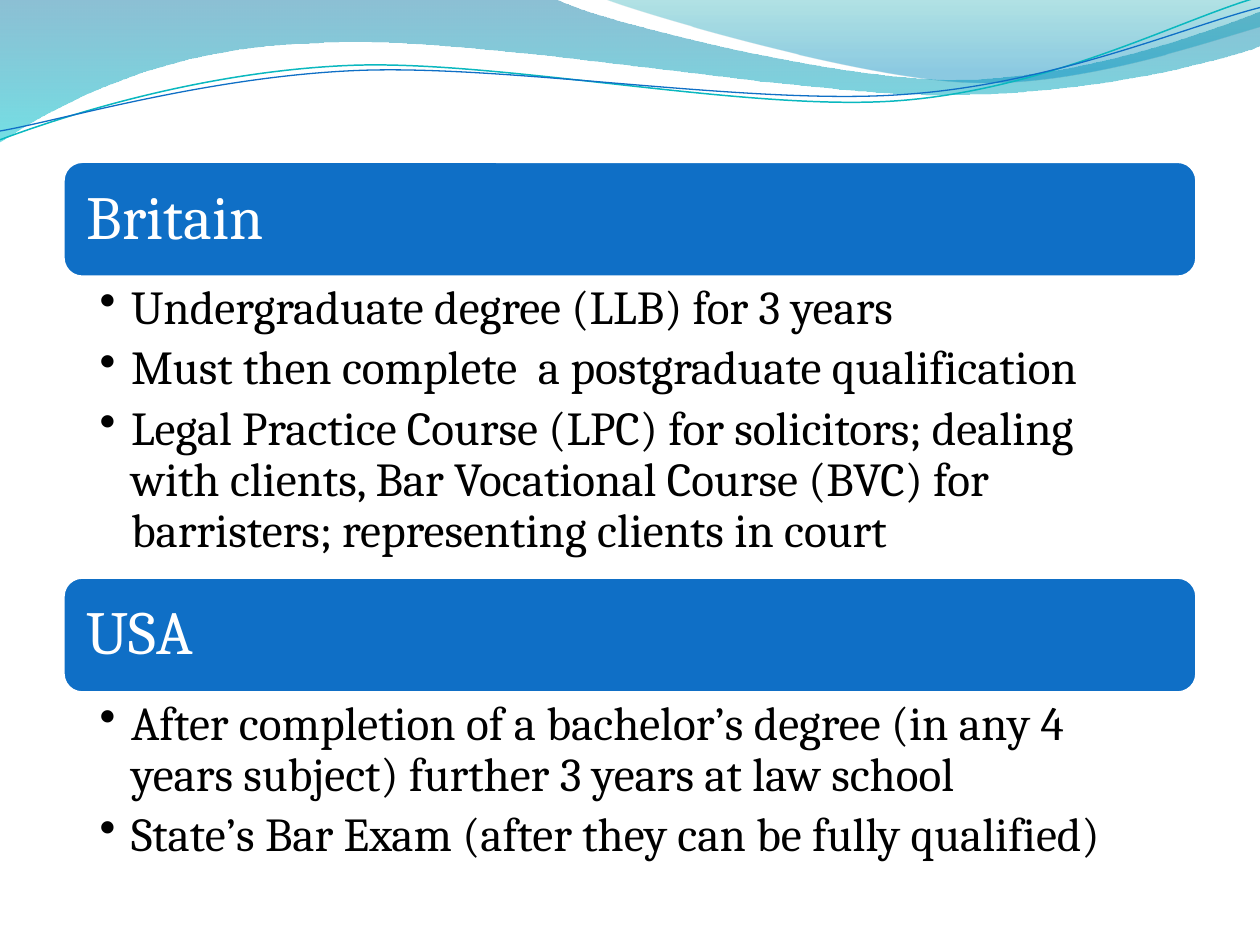
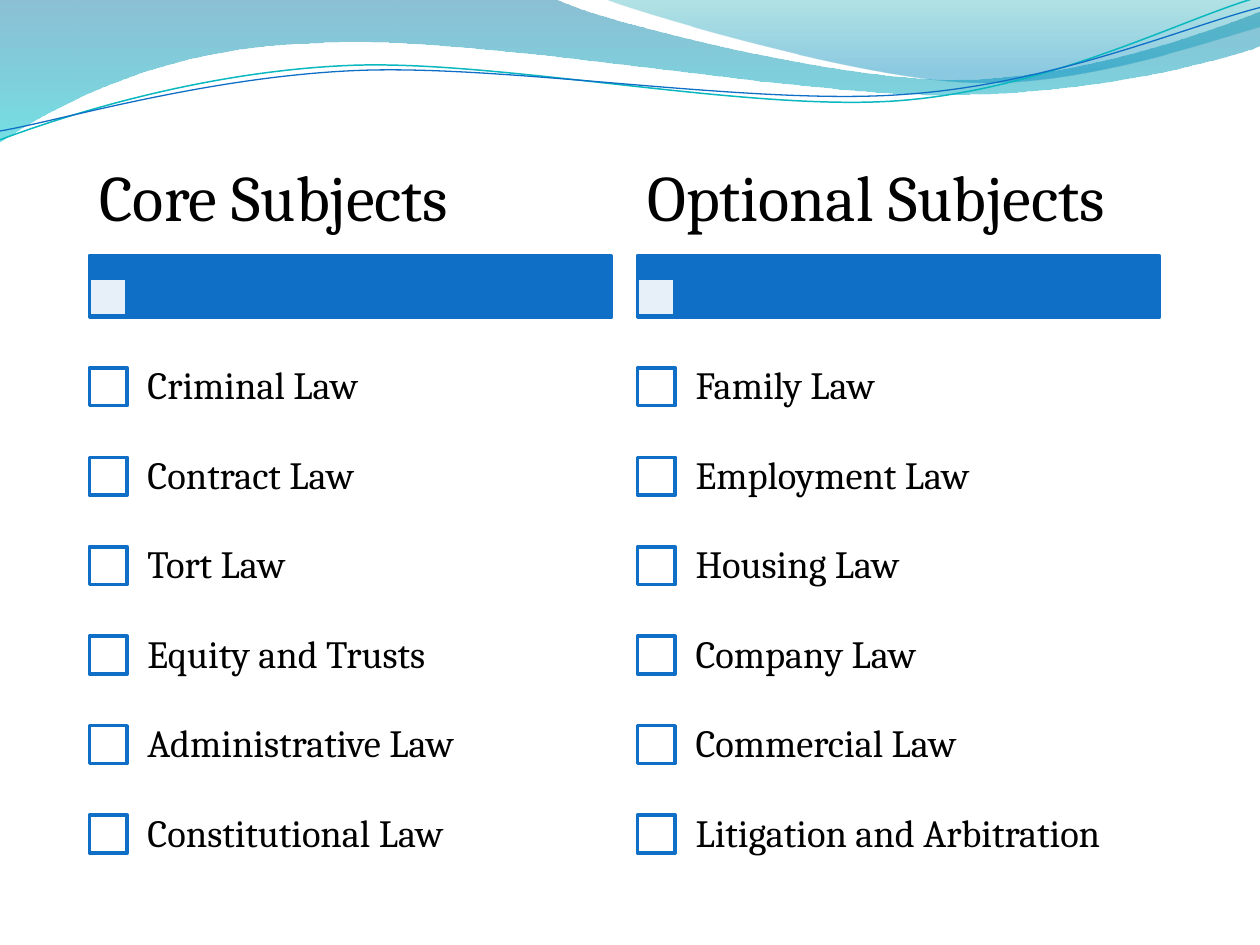
from lxml import etree
from pptx import Presentation
from pptx.dml.color import RGBColor
from pptx.enum.shapes import MSO_SHAPE
from pptx.enum.text import MSO_ANCHOR, PP_ALIGN
from pptx.oxml import parse_xml
from pptx.oxml.ns import nsdecls, qn
from pptx.util import Emu, Pt

RECTANGLE = MSO_SHAPE.RECTANGLE
ROUNDED = MSO_SHAPE.ROUNDED_RECTANGLE
TOP, MIDDLE = MSO_ANCHOR.TOP, MSO_ANCHOR.MIDDLE
LEFT = PP_ALIGN.LEFT

PX = 9144  # 100 px to the inch
SLIDE_WIDTH, SLIDE_HEIGHT = 1000, 750
BLANK_LAYOUT = 6

FONT = "Cambria"
BLUE, WHITE, BLACK = "0F6FC6", "FFFFFF", "000000"
TEAL = "0AB8BF"

# Each outline: start point, then lines (one point) or curves (three points)
WIDE_WAVE = [
    [(0, 0)], [(440, -1)],
    [(476, 17), (664, 63), (758, 63)], [(853, 63), (958, 26), (1000, 9)],
    [(1001, 36)],
    [(983, 44), (870, 76), (746, 75)], [(622, 75), (382, 28), (257, 34)],
    [(129, 36), (46, 83), (-1, 113)],
]
RIGHT_WAVE = [
    [(479, -1)],
    [(509, 11), (682, 62), (769, 65)], [(856, 69), (961, 32), (1000, 21)],
    [(1000, 0)],
]
TEAL_STRAND = [
    [(0, 111)],
    [(48, 93), (158, 57), (277, 52)], [(395, 47), (593, 89), (713, 80)],
    [(833, 71), (938, 15), (998, -2)],
]
BLUE_STRAND = [
    [(0, 104)],
    [(47, 96), (164, 61), (283, 56)], [(403, 51), (597, 84), (717, 75)],
    [(836, 67), (941, 21), (1000, 6)],
]
# Gradient stops: position, colour, opacity in percent
WIDE_STOPS = [(0, "0074A1", 45), (100, "00C6CF", 55)]
RIGHT_STOPS = [(0, "00A1A9", 30), (80, "008BBF", 45)]

SYSTEMS = [
    ("Britain", 128, 238, [
        "Undergraduate degree (LLB) for 3 years",
        "Must then complete  a postgraduate qualification",
        "Legal Practice Course (LPC) for solicitors; dealing with clients, "
        "Bar Vocational Course (BVC) for barristers; representing clients in court",
    ]),
    ("USA", 458, 143, [
        "After completion of a bachelor’s degree (in any 4 years subject) "
        "further 3 years at law school",
        "State’s Bar Exam (after they can be fully qualified)",
    ]),
]
SUBJECTS = [
    ("Core Subjects", 71, [
        "Criminal Law", "Contract Law", "Tort Law", "Equity and Trusts",
        "Administrative Law", "Constitutional Law",
    ]),
    ("Optional Subjects", 506, [
        "Family Law", "Employment Law", "Housing Law", "Company Law",
        "Commercial Law", "Litigation and Arbitration",
    ]),
]


def px(length):
    return Emu(length * PX)


def rgb(color):
    return RGBColor.from_string(color)


def add_box(slide, kind, box, fill, line, opacity=100):
    shape = slide.shapes.add_shape(kind, *map(px, box))
    shape.shadow.inherit = False
    shape.fill.solid()
    shape.fill.fore_color.rgb = rgb(fill)
    if opacity < 100:
        color = shape.fill._xPr.find(".//" + qn("a:srgbClr"))
        etree.SubElement(color, qn("a:alpha"), val=str(opacity * 1000))
    shape.line.color.rgb = rgb(line)
    shape.line.width = Pt(2)
    return shape


def add_text(slide, text, box, size, color=BLACK, anchor=MIDDLE,
             insets=(8, 5, 8, 5), bullet=False, space_after=0):
    """Text is one string, or a list with one string per paragraph."""
    frame = slide.shapes.add_textbox(*map(px, box)).text_frame
    frame.word_wrap = True
    frame.vertical_anchor = anchor
    (frame.margin_left, frame.margin_top,
     frame.margin_right, frame.margin_bottom) = map(px, insets)
    lines = [text] if isinstance(text, str) else text
    for index, line in enumerate(lines):
        paragraph = frame.add_paragraph() if index else frame.paragraphs[0]
        paragraph.alignment = LEFT
        paragraph.line_spacing = 0.9
        paragraph.space_after = Pt(space_after)
        if bullet:
            paragraph.level = 1
            properties = paragraph._p.get_or_add_pPr()
            properties.set("marL", str(px(25)))
            properties.set("indent", str(px(-25)))
            etree.SubElement(properties, qn("a:buChar"), char="•")
        run = paragraph.add_run()
        run.text = line
        run.font.name = FONT
        run.font.size = Pt(size)
        run.font.color.rgb = rgb(color)


def add_curve(slide, outline, closed):
    """Build the outline from its points, then bend each triple into a curve."""
    start, *segments = outline
    points = [point for segment in segments for point in segment]
    builder = slide.shapes.build_freeform(*start[0], scale=PX)
    builder.add_line_segments(points, close=closed)
    shape = builder.convert_to_shape()
    shape.shadow.inherit = False
    steps = iter(shape._element.findall(".//" + qn("a:lnTo")))
    for segment in segments:
        first, *others = [next(steps) for _ in segment]
        if others:
            first.tag = qn("a:cubicBezTo")
            for step in others:
                first.append(step[0])
                step.getparent().remove(step)
    return shape


def add_wave(slide, outline, stops):
    shape = add_curve(slide, outline, closed=True)
    shape.line.fill.background()
    stop_xml = "".join(
        f'<a:gs pos="{position * 1000}"><a:srgbClr val="{color}">'
        f'<a:alpha val="{opacity * 1000}"/></a:srgbClr></a:gs>'
        for position, color, opacity in stops)
    gradient = parse_xml(
        f'<a:gradFill {nsdecls("a")} rotWithShape="1"><a:gsLst>{stop_xml}</a:gsLst>'
        '<a:lin ang="5400000" scaled="0"/></a:gradFill>')
    shape._element.spPr.find(qn("a:custGeom")).addnext(gradient)


def add_strand(slide, outline, color, width):
    shape = add_curve(slide, outline, closed=False)
    shape.fill.background()
    shape.line.color.rgb = rgb(color)
    shape.line.width = Pt(width)


def add_wavy_slide(presentation):
    slide = presentation.slides.add_slide(presentation.slide_layouts[BLANK_LAYOUT])
    add_wave(slide, WIDE_WAVE, WIDE_STOPS)
    add_wave(slide, RIGHT_WAVE, RIGHT_STOPS)
    add_strand(slide, TEAL_STRAND, TEAL, 0.85)
    add_strand(slide, BLUE_STRAND, BLUE, 0.75)
    return slide


def add_country(slide, left, top, width, body_height, name, facts):
    band_height, edge = 92, 4
    # Heading band
    add_box(slide, ROUNDED, (left, top, width, band_height), BLUE, WHITE)
    add_text(slide, name, (left + edge, top + edge, width - 2 * edge,
                           band_height - 2 * edge),
             size=35, color=WHITE, insets=(15,) * 4)
    # Bulleted facts
    add_text(slide, facts, (left, top + band_height, width, body_height), size=27,
             anchor=TOP, insets=(29, 5, 27, 5), bullet=True, space_after=5.5)


def add_checklist(slide, left, top, width, title, items):
    title_height, band_height, square = 88, 49, 30
    first_row, row_height = 157, 71
    # Band, its faded square and the title above
    band_top = top + title_height
    add_box(slide, RECTANGLE, (left, band_top, width, band_height), BLUE, BLUE)
    add_box(slide, RECTANGLE, (left, band_top + band_height - square - 1, square, square),
            WHITE, BLUE, opacity=90)
    add_text(slide, title, (left, top, width, title_height), size=37)
    # Rows with a check box each
    for index, item in enumerate(items):
        row_top = top + first_row + index * row_height
        square_top = row_top + (row_height - square) // 2
        add_box(slide, RECTANGLE, (left, square_top, square, square), WHITE, BLUE)
        add_text(slide, item, (left + square - 1, row_top, width - square + 1, row_height),
                 size=22, insets=(17,) * 4)


def main():
    presentation = Presentation()
    presentation.slide_width = px(SLIDE_WIDTH)
    presentation.slide_height = px(SLIDE_HEIGHT)

    training_slide = add_wavy_slide(presentation)
    for name, top, body_height, facts in SYSTEMS:
        add_country(training_slide, 50, top, 900, body_height, name, facts)

    subjects_slide = add_wavy_slide(presentation)
    for title, left, items in SUBJECTS:
        add_checklist(subjects_slide, left, 115, 414, title, items)

    presentation.save("out.pptx")


if __name__ == "__main__":
    main()
